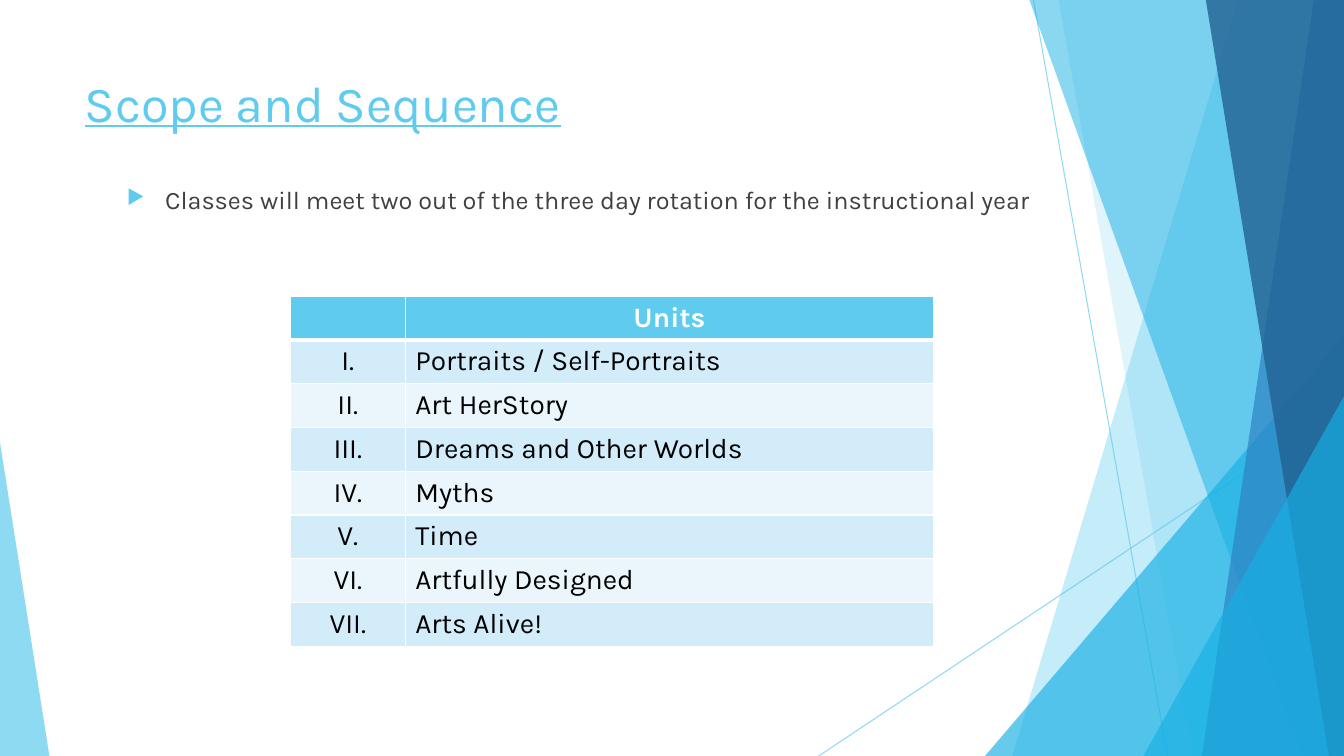
from dataclasses import dataclass

from pptx import Presentation
from pptx.dml.color import RGBColor
from pptx.enum import shapes, text
from pptx.oxml import parse_xml
from pptx.oxml.ns import nsdecls, qn
from pptx.util import Pt

PX = 9144  # 100 px to the inch
WIDTH, HEIGHT = 1333, 750
FONT = "Karla"
SKY, CYAN, BLUE, NAVY = "5FCBEF", "17B0E4", "2E83C3", "226292"
WHITE, BLACK, GREY = "FFFFFF", "000000", "404040"
BANDS = ("D2ECF9", "EAF6FC")
UNITS = (
    ("I.", "Portraits / Self-Portraits"),
    ("II.", "Art HerStory"),
    ("III.", "Dreams and Other Worlds"),
    ("IV.", "Myths"),
    ("V.", "Time"),
    ("VI.", "Artfully Designed"),
    ("VII.", "Arts Alive!"),
)


@dataclass
class Ray:
    start: tuple[int, int]
    end: tuple[int, int]


@dataclass
class Panel:
    """A full-height band from a slanted left edge to the slide's right edge."""
    top: int
    bottom: int
    colour: str
    opacity: int


@dataclass
class Corner:
    """A triangle standing on the slide's bottom edge."""
    left: int
    top: int
    width: int
    apex: int
    colour: str
    opacity: int


RAYS = (Ray((1025, 0), (1158, HEIGHT)), Ray((WIDTH, 403), (812, HEIGHT)))
FACETS = (
    Panel(1228, 1004, SKY, 36),
    Panel(1050, 1183, SKY, 20),
    Corner(977, 333, 356, 1, CYAN, 66),
    Panel(1021, 1291, CYAN, 50),
    Panel(1303, 1192, BLUE, 70),
    Panel(1196, 1318, NAVY, 80),
    Corner(1134, 393, 199, 1, CYAN, 66),
    Corner(0, 439, 49, 0, SKY, 70),
)


def paint(fill, colour: str, opacity: int = 100) -> None:
    fill.solid()
    fill.fore_color.rgb = RGBColor.from_string(colour)
    if opacity < 100:
        tint = fill._xPr.find(qn("a:solidFill"))[0]
        tint.append(parse_xml(f'<a:alpha {nsdecls("a")} val="{opacity * 1000}"/>'))


def write(frame, words: str, *, size: int, colour: str, bold: bool = False,
          underline: bool = False, align=text.PP_ALIGN.LEFT):
    para = frame.paragraphs[0]
    para.alignment = align
    span = para.add_run()
    span.text = words
    span.font.name, span.font.size = FONT, Pt(size)
    span.font.bold, span.font.underline = bold, underline
    span.font.color.rgb = RGBColor.from_string(colour)
    return para


def place(box, left: int, top: int, width: int, height: int) -> None:
    box.left, box.top = left * PX, top * PX
    box.width, box.height = width * PX, height * PX


def draw_ray(page, ray: Ray) -> None:
    line = page.shapes.add_connector(
        shapes.MSO_CONNECTOR.STRAIGHT, *(n * PX for n in ray.start + ray.end))
    line.line.width = Pt(0.75)
    paint(line.line.fill, SKY, 70)
    line._element.spPr.append(parse_xml(f'<a:effectLst {nsdecls("a")}/>'))


def draw_facet(page, facet: Panel | Corner) -> None:
    if isinstance(facet, Panel):
        outline = page.shapes.build_freeform(facet.top, 0, scale=PX)
        outline.add_line_segments(
            ((WIDTH, 0), (WIDTH, HEIGHT), (facet.bottom, HEIGHT)))
        shape = outline.convert_to_shape()
    else:
        shape = page.shapes.add_shape(
            shapes.MSO_SHAPE.ISOSCELES_TRIANGLE, facet.left * PX, facet.top * PX,
            facet.width * PX, (HEIGHT - facet.top) * PX)
        shape.adjustments[0] = facet.apex
    shape.shadow.inherit = False
    shape.line.fill.background()
    paint(shape.fill, facet.colour, facet.opacity)


def add_title(page) -> None:
    title = page.shapes.title
    place(title, 74, 67, 940, 144)
    title.text_frame.vertical_anchor = text.MSO_ANCHOR.TOP
    write(title.text_frame, "Scope and Sequence", size=36, colour=SKY, underline=True)
    page.shapes._spTree.append(title._element)  # in front of the facets


def add_bullet(page) -> None:
    box = page.shapes.add_textbox(0, 0, 0, 0)
    place(box, 116, 178, 940, 477)
    box.text_frame.word_wrap = True
    para = write(
        box.text_frame,
        "Classes will meet two out of the three day rotation for the instructional year",
        size=18, colour=GREY)
    para.space_before = Pt(10)
    layout = para._p.get_or_add_pPr()
    layout.set("marL", str(38 * PX))
    layout.set("indent", str(-38 * PX))
    for mark in (f'<a:buClr {nsdecls("a")}><a:srgbClr val="{SKY}"/></a:buClr>',
                 f'<a:buSzPct {nsdecls("a")} val="80000"/>',
                 f'<a:buChar {nsdecls("a")} char="▶"/>'):
        layout.append(parse_xml(mark))


def fill_cell(cell, fill: str, bottom: int = 1) -> None:
    """Set the cell's fill and white borders, with the bottom width in points."""
    paint(cell.fill, fill)
    props = cell._tc.get_or_add_tcPr()
    for index, (side, width) in enumerate(zip("LRTB", (1, 1, 1, bottom))):
        props.insert(index, parse_xml(
            f'<a:ln{side} {nsdecls("a")} w="{Pt(width)}"><a:solidFill>'
            f'<a:srgbClr val="{WHITE}"/></a:solidFill></a:ln{side}>'))


def add_units(page) -> None:
    rows = len(UNITS) + 1
    table = page.shapes.add_table(
        rows, 2, 288 * PX, 294 * PX, 638 * PX, rows * 41 * PX).table
    for column, width in zip(table.columns, (114, 524)):
        column.width = width * PX
    for cell in table.rows[0].cells:
        fill_cell(cell, SKY, bottom=3)
    write(table.cell(0, 1).text_frame, "Units", size=20, colour=WHITE, bold=True,
          align=text.PP_ALIGN.CENTER)
    aligns = (text.PP_ALIGN.CENTER, text.PP_ALIGN.LEFT)
    for row, unit in enumerate(UNITS, start=1):
        for column, (words, align) in enumerate(zip(unit, aligns)):
            cell = table.cell(row, column)
            fill_cell(cell, BANDS[(row - 1) % 2])
            if row == 1:
                paint_top(cell)
            write(cell.text_frame, words, size=20, colour=BLACK, align=align)


def paint_top(cell) -> None:
    """Match the top border to the heading's thick rule."""
    cell._tc.tcPr.find(qn("a:lnT")).set("w", str(Pt(3)))


def main() -> None:
    deck = Presentation()
    deck.slide_width, deck.slide_height = WIDTH * PX, HEIGHT * PX
    page = deck.slides.add_slide(deck.slide_layouts[5])
    for ray in RAYS:
        draw_ray(page, ray)
    for facet in FACETS:
        draw_facet(page, facet)
    add_title(page)
    add_bullet(page)
    add_units(page)
    deck.save("out.pptx")


if __name__ == "__main__":
    main()
